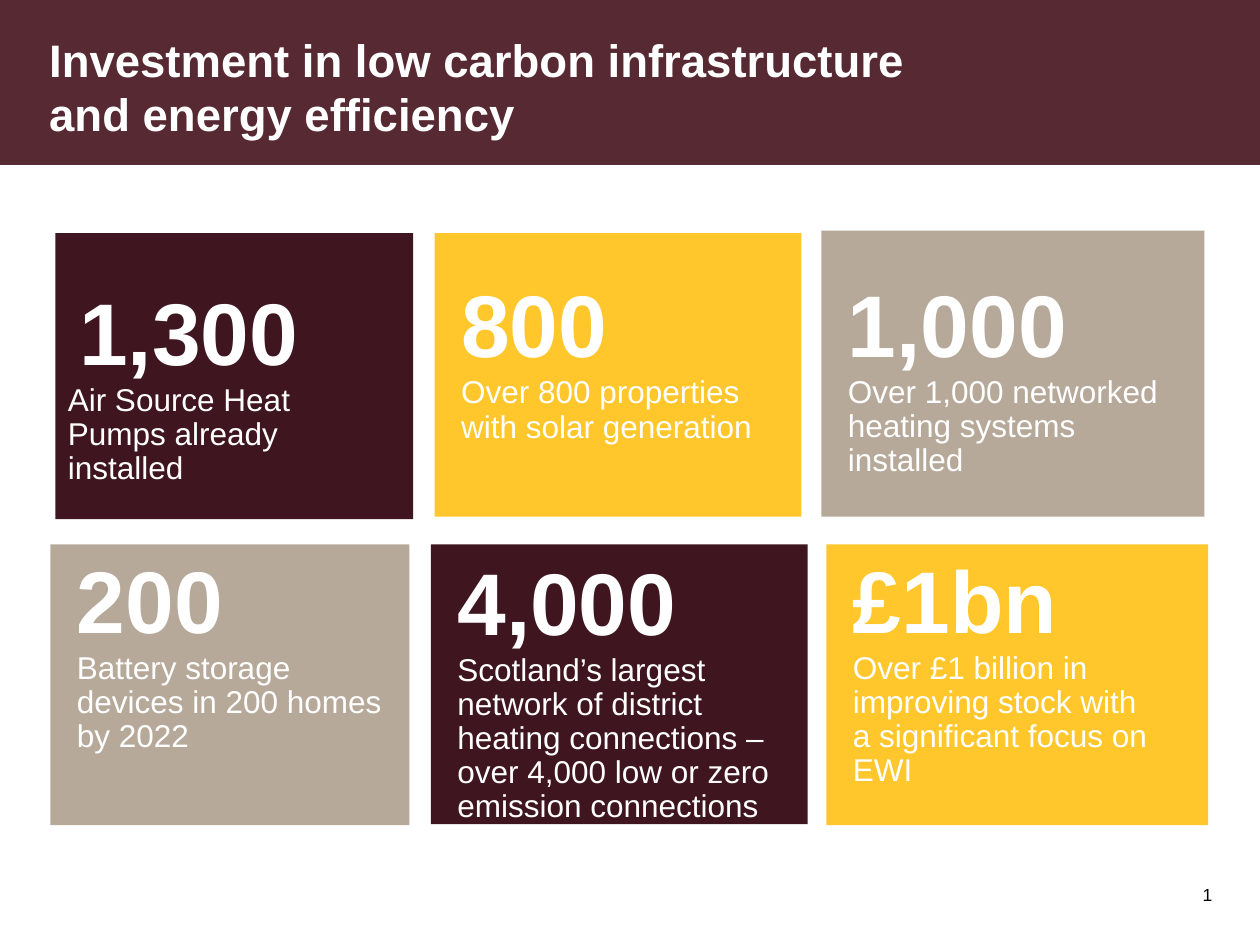
from dataclasses import dataclass

from lxml.etree import SubElement
from pptx import Presentation
from pptx.dml.color import RGBColor
from pptx.enum.shapes import MSO_SHAPE
from pptx.enum.text import MSO_ANCHOR as Anchor, PP_ALIGN as Align
from pptx.oxml.ns import qn
from pptx.util import Inches, Pt


@dataclass(frozen=True)
class Theme:
    font: str = "Arial"
    white: str = "FFFFFF"
    black: str = "000000"
    band: str = "572932"
    plum: str = "3F1620"
    gold: str = "FFC72C"
    stone: str = "B7A99A"
    title_size: int = 26
    figure_size: int = 50
    body_size: int = 18
    number_size: int = 10


class SlideBuilder:
    """Places elements on a grid of 100 columns by 75 rows."""

    columns, rows = 100, 75

    def __init__(self, presentation, theme):
        self.theme = theme
        self.column = presentation.slide_width / self.columns
        self.row = presentation.slide_height / self.rows
        self.slide = presentation.slides.add_slide(presentation.slide_layouts[5])

    def box(self, left, top, width, height):
        return (round(left * self.column), round(top * self.row),
                round(width * self.column), round(height * self.row))

    def style(self, font, size, color, bold=False):
        font.name, font.size, font.bold = self.theme.font, Pt(size), bold
        font.color.rgb = RGBColor.from_string(color)

    def rectangle(self, place, color):
        shape = self.slide.shapes.add_shape(MSO_SHAPE.RECTANGLE, *self.box(*place))
        shape.shadow.inherit = False
        shape.fill.solid()
        shape.fill.fore_color.rgb = RGBColor.from_string(color)
        shape.line.fill.background()
        return shape

    def band(self, height):
        shape = self.rectangle((0, 0, self.columns, height), self.theme.band)
        # Send the band behind the title
        self.slide.shapes._spTree.insert(2, shape._element)

    def title(self, text, place):
        shape = self.slide.shapes.title
        shape.left, shape.top, shape.width, shape.height = self.box(*place)
        frame = shape.text_frame
        frame.text = text
        frame.word_wrap = True
        frame.vertical_anchor = Anchor.MIDDLE
        paragraph = frame.paragraphs[0]
        paragraph.alignment = Align.LEFT
        self.style(paragraph.runs[0].font, self.theme.title_size, self.theme.white, True)

    def card(self, figure, body, place, color, top_inset, side_inset=0.21, indent=0):
        frame = self.rectangle(place, color).text_frame
        frame.word_wrap = True
        frame.vertical_anchor = Anchor.TOP
        frame.margin_left = frame.margin_right = Inches(side_inset)
        frame.margin_top, frame.margin_bottom = Inches(top_inset), 0
        frame.text = f"{figure}\n{body}"
        sizes = (self.theme.figure_size, self.theme.body_size)
        for paragraph, size in zip(frame.paragraphs, sizes):
            paragraph.alignment = Align.LEFT
            paragraph.line_spacing = 0.9
            for run in paragraph.runs:
                self.style(run.font, size, self.theme.white, size == sizes[0])
        if indent:
            properties = frame.paragraphs[0]._p.get_or_add_pPr()
            properties.set("indent", str(Inches(indent)))

    def slide_number(self, value, place):
        frame = self.slide.shapes.add_textbox(*self.box(*place)).text_frame
        frame.word_wrap = True
        paragraph = frame.paragraphs[0]
        paragraph.alignment = Align.RIGHT
        run = paragraph.add_run()
        run.text = value
        self.style(run.font, self.theme.number_size, self.theme.black)
        # Turn the run into a live slide number field
        field = SubElement(paragraph._p, qn("a:fld"), type="slidenum",
                           id="{B6F15528-21DE-4FAA-801E-634DDDAF4B2B}")
        field.extend(list(run._r))
        paragraph._p.remove(run._r)


def main():
    presentation = Presentation()
    presentation.slide_width, presentation.slide_height = Inches(10), Inches(7.5)
    theme = Theme()
    builder = SlideBuilder(presentation, theme)

    # Header
    builder.band(13.1)
    builder.title("Investment in low carbon infrastructure and energy efficiency",
                  (2.9, 2.4, 72.7, 8.9))

    # Upper row of cards
    builder.card("1,300", "Air Source Heat\vPumps already installed",
                 (4.4, 18.5, 28.4, 22.7), theme.plum, 0.45, side_inset=0.1, indent=0.09)
    builder.card("800", "Over 800 properties with solar generation",
                 (34.5, 18.5, 29.1, 22.5), theme.gold, 0.39)
    builder.card("1,000", "Over 1,000 networked heating systems installed",
                 (65.2, 18.3, 30.4, 22.7), theme.stone, 0.41)

    # Lower row of cards
    builder.card("200", "Battery storage devices in 200 homes by 2022",
                 (4, 43.2, 28.5, 22.3), theme.stone, 0.11)
    builder.card("4,000", "Scotland’s largest network of district heating connections – "
                 "over 4,000 low or zero emission connections",
                 (34.2, 43.2, 29.9, 22.2), theme.plum, 0.12)
    builder.card("£1bn", "Over £1 billion in improving stock with\va significant focus on EWI",
                 (65.6, 43.2, 30.3, 22.3), theme.gold, 0.11)

    # Footer
    builder.slide_number("6", (87.8, 69.7, 9.4, 4.5))
    presentation.save("out.pptx")


if __name__ == "__main__":
    main()
